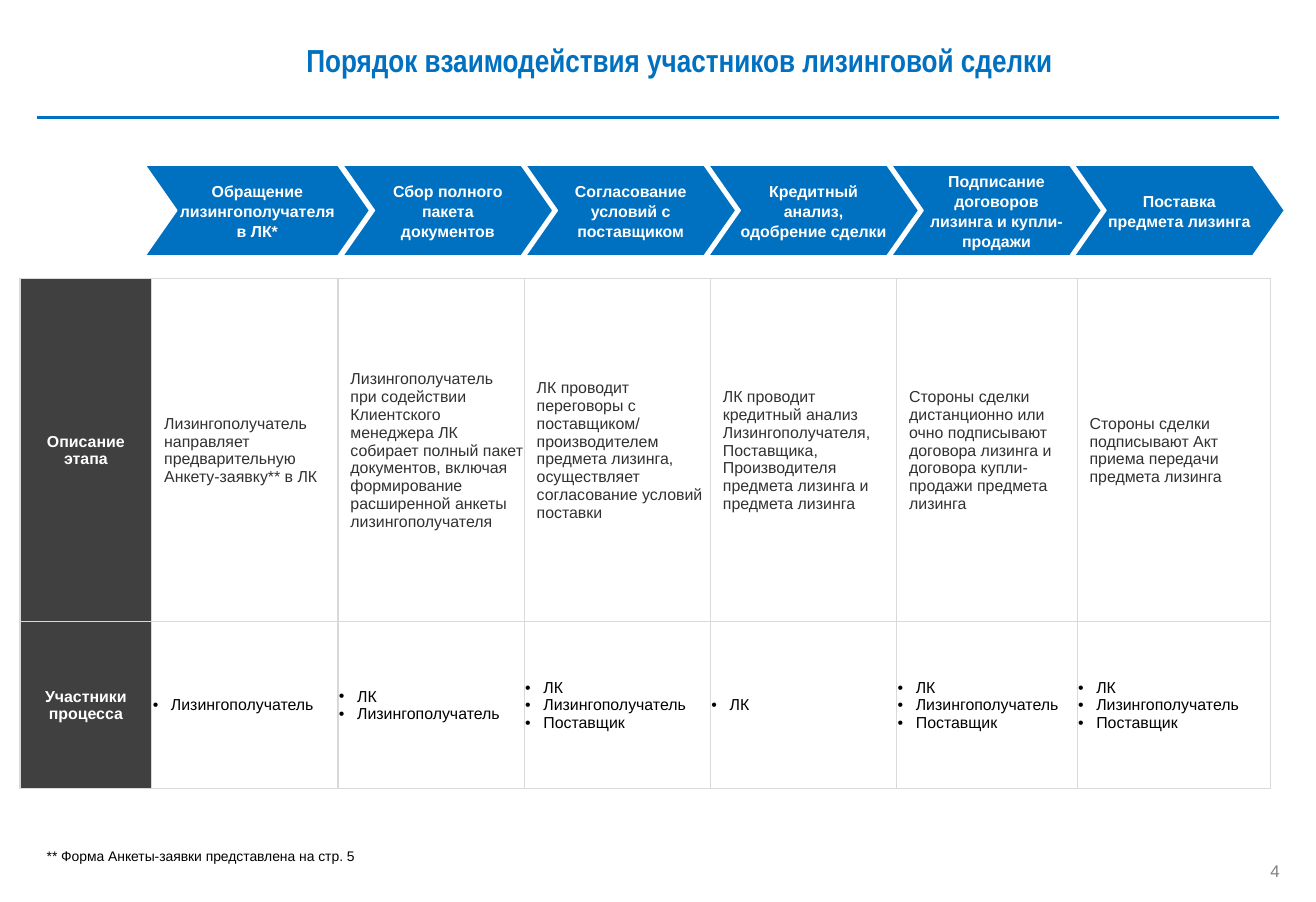
from pptx import Presentation
from pptx.util import Inches, Pt
from pptx.dml.color import RGBColor
from pptx.enum.shapes import MSO_CONNECTOR, MSO_SHAPE
from pptx.enum.text import MSO_ANCHOR, PP_ALIGN
from pptx.oxml import parse_xml
from pptx.oxml.ns import nsdecls
from lxml.etree import SubElement

COLORS = {"blue": "0070C0", "white": "FFFFFF", "dark": "404040", "border": "D9D9D9",
          "body": "313131", "black": "000000", "gray": "808080"}


def rgb(name):
    return RGBColor.from_string(COLORS[name])


def write(tf, lines, size, color, margins=(0, 0, 0, 0), font="Arial", bold=False,
          align=PP_ALIGN.LEFT, spacing=None, indent=None, bullet=False):
    for side, value in zip(("left", "top", "right", "bottom"), margins):
        setattr(tf, f"margin_{side}", Inches(value))
    for i, line in enumerate(lines):
        p = tf.paragraphs[0] if i == 0 else tf.add_paragraph()
        if indent:
            pPr = p._p.get_or_add_pPr()
            pPr.set("marL", str(Inches(indent)))
            pPr.set("indent", str(Inches(-indent if bullet else 0)))
            if bullet:
                pPr.append(parse_xml(f'<a:buFont {nsdecls("a")} typeface="Arial"/>'))
                pPr.append(parse_xml(f'<a:buChar {nsdecls("a")} char="•"/>'))
        p.alignment = align
        if spacing:
            p.line_spacing = spacing
        r = p.add_run()
        r.text = line
        for name, value in {"name": font, "size": Pt(size), "bold": bold}.items():
            setattr(r.font, name, value)
        r.font.color.rgb = rgb(color)


prs = Presentation()
prs.slide_width, prs.slide_height = Inches(13.78), Inches(9.45)
s = prs.slides.add_slide(prs.slide_layouts[6])

rule = s.shapes.add_connector(MSO_CONNECTOR.STRAIGHT, Inches(0.39), Inches(1.23),
                              Inches(13.39), Inches(1.23))
rule.line.color.rgb = rgb("blue")
rule.line.width = Pt(2.25)
SubElement(rule._element.spPr, "{http://schemas.openxmlformats.org/drawingml/2006/main}effectLst")

inset = (0.1, 0.05, 0.1, 0.05)
texts = [
    ((3.11, 0.25, 10.47, 0.76), "Порядок взаимодействия участников лизинговой сделки", MSO_ANCHOR.MIDDLE,
     {"size": 24, "color": "blue", "font": "Arial Narrow", "bold": True, "margins": inset}),
    ((0.39, 8.83, 12.91, 0.28), "** Форма Анкеты-заявки представлена на стр. 5", MSO_ANCHOR.TOP,
     {"size": 10.5, "color": "black", "margins": inset}),
    ((12.98, 9.03, 0.42, 0.2), "4", MSO_ANCHOR.TOP,
     {"size": 12.7, "color": "gray", "align": PP_ALIGN.RIGHT, "spacing": Pt(14.3)}),
]
for box, text, anchor, style in texts:
    tf = s.shapes.add_textbox(*map(Inches, box)).text_frame
    tf.word_wrap = True
    tf.vertical_anchor = anchor
    write(tf, [text], **style)

lessor, lessee, supplier = "ЛК", "Лизингополучатель", "Поставщик"
stages = [
    ("Обращение лизингополучателя в ЛК*",
     "Лизингополучатель направляет предварительную Анкету-заявку** в ЛК",
     [lessee]),
    ("Сбор полного пакета документов",
     "Лизингополучатель при содействии Клиентского менеджера ЛК собирает полный пакет "
     "документов, включая формирование расширенной анкеты лизингополучателя",
     [lessor, lessee]),
    ("Согласование условий с поставщиком",
     "ЛК проводит переговоры с поставщиком/ производителем предмета лизинга, "
     "осуществляет согласование условий поставки",
     [lessor, lessee, supplier]),
    ("Кредитный анализ, одобрение сделки",
     "ЛК проводит кредитный анализ Лизингополучателя, Поставщика, Производителя "
     "предмета лизинга и предмета лизинга",
     [lessor]),
    ("Подписание договоров лизинга и купли-продажи",
     "Стороны сделки дистанционно или очно подписывают договора лизинга и договора "
     "купли-продажи предмета лизинга",
     [lessor, lessee, supplier]),
    ("Поставка предмета лизинга",
     "Стороны сделки подписывают Акт приема передачи предмета лизинга",
     [lessor, lessee, supplier]),
]

for i, (name, _, _) in enumerate(stages):
    left, width = (1.52, 2.35) if i == 0 else (3.59 + 1.915 * (i - 1), 2.2)
    sp = s.shapes.add_shape(MSO_SHAPE.CHEVRON, Inches(left), Inches(1.73), Inches(width), Inches(0.95))
    sp.adjustments[0] = 0.35
    sp.shadow.inherit = False
    sp.fill.solid()
    sp.fill.fore_color.rgb = rgb("blue")
    sp.line.color.rgb = rgb("white")
    sp.line.width = Pt(1)
    sp.text_frame.word_wrap = True
    sp.text_frame.vertical_anchor = MSO_ANCHOR.MIDDLE
    write(sp.text_frame, [name], 12, "white", bold=True, align=PP_ALIGN.CENTER, spacing=1.06)

table = s.shapes.add_table(2, 7, Inches(0.21), Inches(2.92), Inches(13.1), Inches(5.34)).table
table.first_row = table.horz_banding = False
for column, width in zip(table.columns, (1.38, 1.95, 1.95, 1.95, 1.95, 1.89, 2.02)):
    column.width = Inches(width)
for row, height in zip(table.rows, (3.59, 1.75)):
    row.height = Inches(height)

header = {"color": "white", "bold": True, "align": PP_ALIGN.CENTER}
rows = [
    (["Описание", "этапа"], [[text] for _, text, _ in stages], {"color": "body", "indent": 0.12}),
    (["Участники процесса"], [people for _, _, people in stages],
     {"color": "black", "indent": 0.19, "bullet": True}),
]
for y, (label, contents, style) in enumerate(rows):
    for x, lines in enumerate([label] + contents):
        cell = table.cell(y, x)
        cell.vertical_anchor = MSO_ANCHOR.MIDDLE
        write(cell.text_frame, lines, 12, **(style if x else header))
        cell.margin_left = cell.margin_top = cell.margin_right = Inches(0.01)
        cell.margin_bottom = 0
        for side in "LRTB":
            cell._tc.get_or_add_tcPr().append(parse_xml(
                f'<a:ln{side} {nsdecls("a")} w="{Pt(1)}"><a:solidFill>'
                f'<a:srgbClr val="{COLORS["border"]}"/></a:solidFill></a:ln{side}>'))
        if x:
            cell.fill.background()
        else:
            cell.fill.solid()
            cell.fill.fore_color.rgb = rgb("dark")

prs.save("out.pptx")
